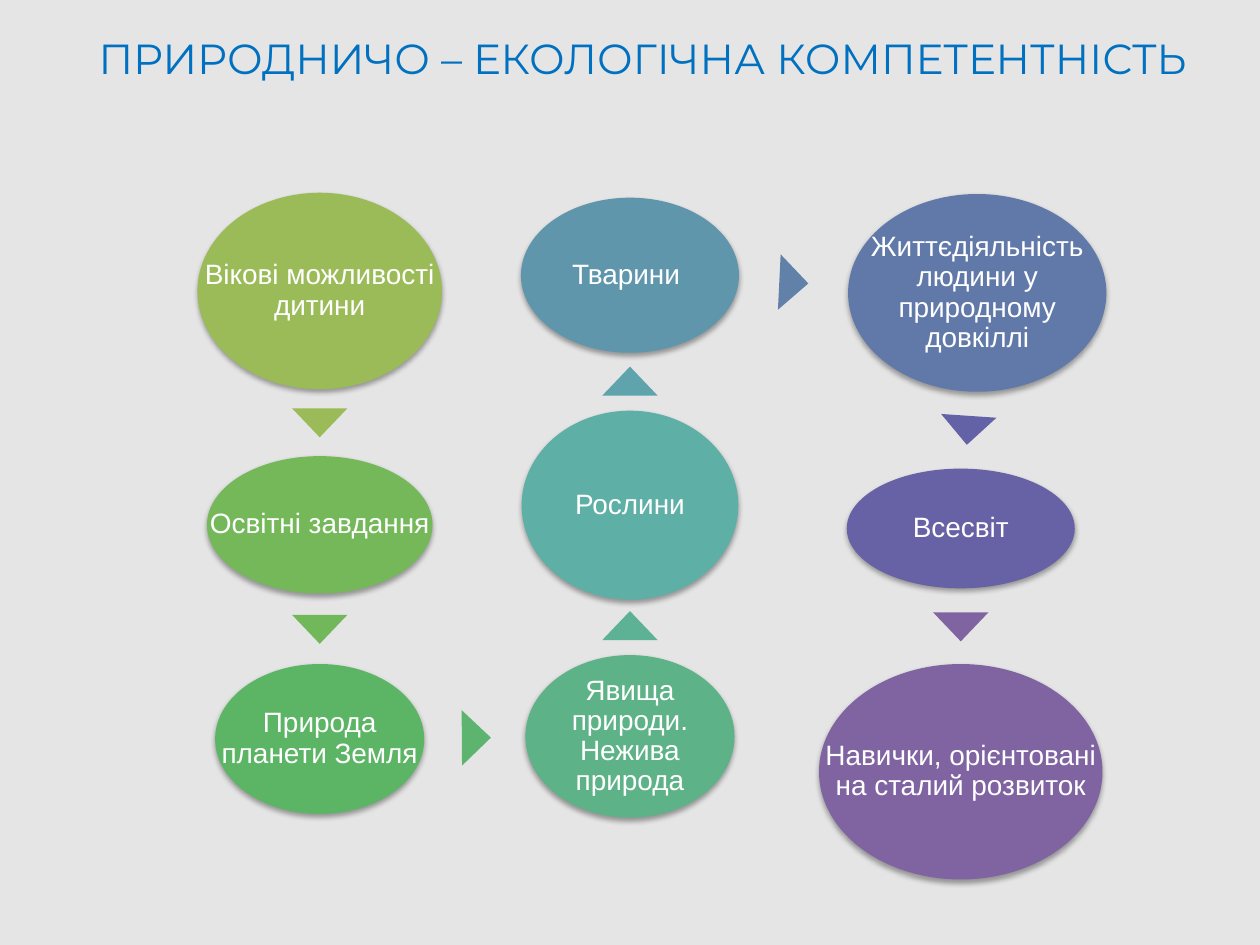
from dataclasses import dataclass

from lxml.etree import SubElement
from pptx import Presentation
from pptx.dml.color import RGBColor
from pptx.enum.shapes import MSO_SHAPE
from pptx.enum.text import MSO_ANCHOR, MSO_AUTO_SIZE, PP_ALIGN
from pptx.oxml.ns import qn
from pptx.shapes.autoshape import Shape
from pptx.slide import Slide
from pptx.util import Pt

COLORS = {
    "background": "E5E5E5",
    "title": "0070C0",
    "label": "FFFFFF",
    "shadow": "000000",
    "age": "9BBB59",
    "tasks": "75B85A",
    "tasks_arrow": "70B85A",
    "planet": "5CB565",
    "planet_arrow": "5CB46F",
    "phenomena": "5DB287",
    "phenomena_arrow": "5DB195",
    "plants": "5EAFA6",
    "plants_arrow": "5FA4AD",
    "animals": "6096AC",
    "animals_arrow": "6181A9",
    "human": "6179A8",
    "human_arrow": "6362A6",
    "universe": "6762A5",
    "skills": "8064A2",
}

LEFT, MIDDLE, RIGHT = 182.7, 360, 549
ARROW_WIDTH, ARROW_HEIGHT = 31.7, 16.6


@dataclass(frozen=True)
class Topic:
    text: str
    center_x: float
    center_y: float
    width: float
    height: float
    color: str


@dataclass(frozen=True)
class Arrow:
    center_x: float
    center_y: float
    rotation: float
    color: str


TOPICS = [
    Topic("Вікові можливості дитини", LEFT, 166.3, 139.7, 112.3, "age"),
    Topic("Освітні завдання", LEFT, 299.9, 128.9, 78.5, "tasks"),
    Topic("Природа планети Земля", LEFT, 422.3, 119.5, 85.7, "planet"),
    Topic("Явища природи. Нежива природа", MIDDLE, 420.8, 119.5, 92.9, "phenomena"),
    Topic("Рослини", MIDDLE, 288.7, 123.8, 108, "plants"),
    Topic("Тварини ", MIDDLE, 157.3, 124.6, 88.6, "animals"),
    Topic("Життєдіяльність людини у природному довкіллі",
          558.4, 167.4, 147.6, 113, "human"),
    Topic("Всесвіт", RIGHT, 302, 130.3, 68.4, "universe"),
    Topic("Навички, орієнтовані на сталий розвиток", RIGHT, 441, 162, 123.1, "skills"),
]

ARROWS = [
    Arrow(LEFT, 241.6, 180, "age"),
    Arrow(LEFT, 359.6, 180, "tasks_arrow"),
    Arrow(272.2, 421.6, 89.6, "planet_arrow"),
    Arrow(MIDDLE, 357.5, 0, "phenomena_arrow"),
    Arrow(MIDDLE, 217.8, 0, "plants_arrow"),
    Arrow(453.6, 161.6, 92.8, "animals_arrow"),
    Arrow(553, 245.9, 183.9, "human_arrow"),
    Arrow(RIGHT, 358.2, 180, "skills"),
]


def add_filled_shape(slide: Slide, kind: MSO_SHAPE, center_x: float, center_y: float,
                     width: float, height: float, color: str) -> Shape:
    shape = slide.shapes.add_shape(kind, Pt(center_x - width / 2), Pt(center_y - height / 2),
                                   Pt(width), Pt(height))
    shape.shadow.inherit = False
    shape.fill.solid()
    shape.fill.fore_color.rgb = RGBColor.from_string(COLORS[color])
    shape.line.fill.background()
    return shape


def add_soft_shadow(shape: Shape) -> None:
    effects = shape._element.spPr.find(qn("a:effectLst"))
    shadow = SubElement(effects, qn("a:outerShdw"), blurRad=str(Pt(3.1)),
                        dist=str(Pt(1.8)), dir="5400000", rotWithShape="0")
    color = SubElement(shadow, qn("a:srgbClr"), val=COLORS["shadow"])
    SubElement(color, qn("a:alpha"), val="35000")


def add_text(slide: Slide, text: str, left: float, top: float, width: float, height: float,
             font_name: str, size: float, color: str) -> Shape:
    shape = slide.shapes.add_textbox(Pt(left), Pt(top), Pt(width), Pt(height))
    text_frame = shape.text_frame
    text_frame.word_wrap = True
    text_frame.text = text
    paragraph = text_frame.paragraphs[0]
    paragraph.alignment = PP_ALIGN.CENTER
    font = paragraph.runs[0].font
    font.name = font_name
    font.size = Pt(size)
    font.color.rgb = RGBColor.from_string(COLORS[color])
    return shape


def add_topic(slide: Slide, topic: Topic) -> None:
    ellipse = add_filled_shape(slide, MSO_SHAPE.OVAL, topic.center_x, topic.center_y,
                               topic.width, topic.height, topic.color)
    add_soft_shadow(ellipse)
    label = add_text(slide, topic.text, topic.center_x - topic.width / 2,
                     topic.center_y - topic.height / 2, topic.width, topic.height,
                     "Arial", 16, "label")
    text_frame = label.text_frame
    text_frame.vertical_anchor = MSO_ANCHOR.MIDDLE
    text_frame.margin_left = text_frame.margin_right = Pt(1.4)
    text_frame.margin_top = text_frame.margin_bottom = Pt(1.4)
    text_frame.paragraphs[0].line_spacing = 0.9


def add_arrow(slide: Slide, arrow: Arrow) -> None:
    triangle = add_filled_shape(slide, MSO_SHAPE.ISOSCELES_TRIANGLE, arrow.center_x,
                                arrow.center_y, ARROW_WIDTH, ARROW_HEIGHT, arrow.color)
    triangle.rotation = arrow.rotation


def main() -> None:
    presentation = Presentation()
    presentation.slide_width = Pt(720)
    presentation.slide_height = Pt(540)
    slide = presentation.slides.add_slide(presentation.slide_layouts[6])
    slide.background.fill.solid()
    slide.background.fill.fore_color.rgb = RGBColor.from_string(COLORS["background"])

    title = add_text(slide, "ПРИРОДНИЧО – ЕКОЛОГІЧНА КОМПЕТЕНТНІСТЬ",
                     14.4, 15.1, 705.6, 36, "Montserrat", 24, "title")
    title.text_frame.auto_size = MSO_AUTO_SIZE.SHAPE_TO_FIT_TEXT
    for topic in TOPICS:
        add_topic(slide, topic)
    for arrow in ARROWS:
        add_arrow(slide, arrow)
    presentation.save("out.pptx")


if __name__ == "__main__":
    main()
